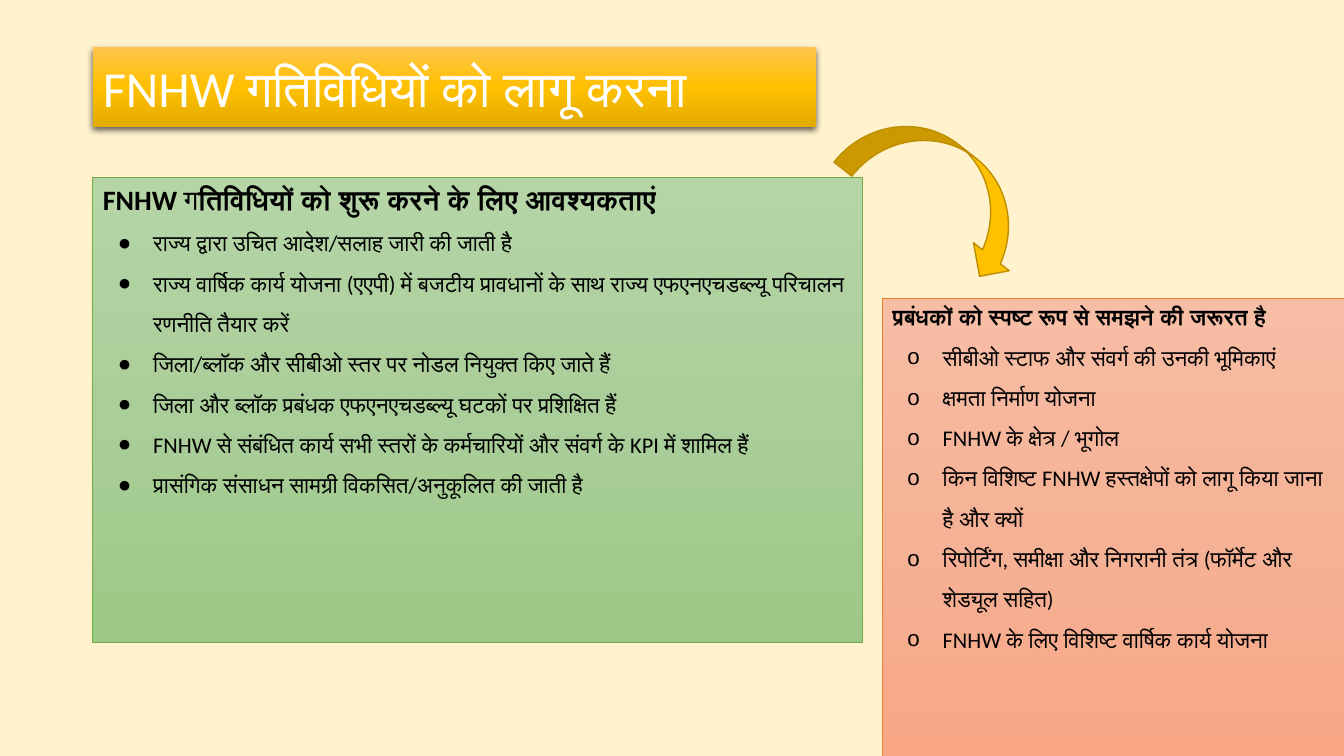
from copy import deepcopy

from lxml.etree import SubElement
from pptx import Presentation
from pptx.dml.color import RGBColor
from pptx.enum.shapes import MSO_SHAPE
from pptx.enum.text import MSO_ANCHOR, MSO_AUTO_SIZE, PP_ALIGN
from pptx.oxml.ns import qn
from pptx.util import Inches, Pt

CREAM = RGBColor(0xFF, 0xF2, 0xCC)
BLACK = RGBColor(0x00, 0x00, 0x00)
WHITE = RGBColor(0xFF, 0xFF, 0xFF)
GOLD = RGBColor(0xFF, 0xC0, 0x00)
DARK_GOLD = RGBColor(0xBD, 0x8E, 0x00)
GREEN = RGBColor(0x70, 0xAD, 0x47)
ORANGE = RGBColor(0xED, 0x7D, 0x31)
GOLD_SHADES = (RGBColor(0xFF, 0xC6, 0x4B), GOLD, RGBColor(0xE3, 0xAB, 0x00))
GREEN_SHADES = (RGBColor(0xB5, 0xD5, 0xA7), RGBColor(0xAA, 0xCE, 0x9A),
                RGBColor(0x9C, 0xC9, 0x87))
ORANGE_SHADES = (RGBColor(0xF7, 0xBD, 0xA5), RGBColor(0xF5, 0xB1, 0x96),
                 RGBColor(0xF8, 0xA5, 0x82))

WIDTH, HEIGHT = Inches(13.33), Inches(7.5)
LEFT_EDGE = 6.9

TITLE = "FNHW गतिविधियों को लागू करना"
NEEDS_HEADING = (("FNHW ", True), ("ग", False),
                 ("तिविधियों को शुरू करने के लिए आवश्यकताएं", True))
NEEDS = (
    "राज्य द्वारा उचित आदेश/सलाह जारी की जाती है",
    "राज्य वार्षिक कार्य योजना (एएपी) में बजटीय प्रावधानों के साथ राज्य "
    "एफएनएचडब्ल्यू परिचालन रणनीति तैयार करें",
    "जिला/ब्लॉक और सीबीओ स्तर पर नोडल नियुक्त किए जाते हैं",
    "जिला और ब्लॉक प्रबंधक एफएनएचडब्ल्यू घटकों पर प्रशिक्षित हैं",
    "FNHW से संबंधित कार्य सभी स्तरों के कर्मचारियों और संवर्ग के KPI में शामिल हैं",
    "प्रासंगिक संसाधन सामग्री विकसित/अनुकूलित की जाती है",
)
MANAGERS_HEADING = (("प्रबंधकों को स्पष्ट रूप से समझने की जरूरत है", True),)
MANAGERS = (
    "सीबीओ स्टाफ और संवर्ग की उनकी भूमिकाएं",
    "क्षमता निर्माण योजना",
    "FNHW के क्षेत्र / भूगोल",
    "किन विशिष्ट FNHW हस्तक्षेपों को लागू किया जाना है और क्यों",
    "रिपोर्टिंग, समीक्षा और निगरानी तंत्र (फॉर्मेट और शेड्यूल सहित)",
    "FNHW के लिए विशिष्ट वार्षिक कार्य योजना",
)


def apply_format(target, **values):
    for name, value in values.items():
        setattr(target, name, value)


def share(left, top, width, height):
    """Turn percentages of the slide's size into a position and size."""
    return {"left": int(WIDTH * left / 100), "top": int(HEIGHT * top / 100),
            "width": int(WIDTH * width / 100), "height": int(HEIGHT * height / 100)}


def shade(fill, colors):
    """Fill from top to bottom with three evenly spaced colours."""
    fill.gradient()
    fill.gradient_angle = 270
    stops = fill.gradient_stops
    stop_list = fill._xPr.find(qn("a:gradFill")).find(qn("a:gsLst"))
    stop_list.insert(1, deepcopy(stop_list[0]))
    stops = fill.gradient_stops
    for index, color in enumerate(colors):
        apply_format(stops[index], position=index / 2)
        stops[index].color.rgb = color


def outline(shape, color, points):
    shape.line.color.rgb = color
    shape.line.width = Pt(points)


def write_run(paragraph, text, size, color, bold=False):
    run = paragraph.add_run()
    run.text = text
    apply_format(run.font, name="Calibri", size=Pt(size), bold=bold)
    run.font.color.rgb = color


def set_bullet(paragraph, char=None):
    """Give the paragraph a hanging bullet, or none at all."""
    props = paragraph._p.get_or_add_pPr()
    props.set("marL", str(Inches(0.5) if char else 0))
    props.set("indent", str(Inches(-0.35) if char else 0))
    if char:
        SubElement(props, qn("a:buChar")).set("char", char)
    else:
        SubElement(props, qn("a:buNone"))


def fill_title(title):
    apply_format(title, **share(LEFT_EDGE, 6.27, 53.79, 10.53))
    shade(title.fill, GOLD_SHADES)
    title.line.fill.background()
    effects = SubElement(title._element.spPr, qn("a:effectLst"))
    shadow = SubElement(effects, qn("a:outerShdw"), blurRad=str(Pt(4.5)),
                        dist=str(Pt(1.5)), dir="5400000", rotWithShape="0")
    shadow_color = SubElement(shadow, qn("a:srgbClr"), val=str(BLACK))
    SubElement(shadow_color, qn("a:alpha"), val="63000")
    apply_format(title.text_frame, vertical_anchor=MSO_ANCHOR.MIDDLE,
                 word_wrap=True, auto_size=MSO_AUTO_SIZE.NONE)
    paragraph = title.text_frame.paragraphs[0]
    paragraph.alignment = PP_ALIGN.LEFT
    write_run(paragraph, TITLE, 36, WHITE)


def fill_panel(panel, area, shades, edge, heading, heading_size, items, bullet):
    apply_format(panel, **share(*area))
    shade(panel.fill, shades)
    outline(panel, edge, 0.5)
    frame = panel.text_frame
    apply_format(frame, vertical_anchor=MSO_ANCHOR.TOP, word_wrap=True,
                 auto_size=MSO_AUTO_SIZE.NONE)
    heading_line = frame.paragraphs[0]
    set_bullet(heading_line)
    heading_line.space_before = Pt(0)
    for text, bold in heading:
        write_run(heading_line, text, heading_size, BLACK, bold)
    for item in items:
        paragraph = frame.add_paragraph()
        set_bullet(paragraph, bullet)
        apply_format(paragraph, line_spacing=1.5, space_before=Pt(0))
        write_run(paragraph, item, 16, BLACK)


def add_turn_arrow(slide):
    arrow = slide.shapes.add_shape(MSO_SHAPE.CURVED_LEFT_ARROW,
                                   **share(66.84, 11.47, 6.75, 27.47))
    arrow.rotation = 308.1
    arrow.shadow.inherit = False
    arrow.fill.solid()
    arrow.fill.fore_color.rgb = GOLD
    outline(arrow, DARK_GOLD, 1)


def main():
    deck = Presentation()
    apply_format(deck, slide_width=WIDTH, slide_height=HEIGHT)
    slide = deck.slides.add_slide(deck.slide_layouts.get_by_name("Two Content"))
    slide.background.fill.solid()
    slide.background.fill.fore_color.rgb = CREAM

    title, needs, managers = list(slide.placeholders)[:3]
    fill_title(title)
    fill_panel(needs, (LEFT_EDGE, 23.47, 57.24, 61.47), GREEN_SHADES, GREEN,
               NEEDS_HEADING, 20, NEEDS, "●")
    fill_panel(managers, (65.64, 39.47, 34.36, 64.13), ORANGE_SHADES, ORANGE,
               MANAGERS_HEADING, 16, MANAGERS, "o")
    add_turn_arrow(slide)
    deck.save("out.pptx")


if __name__ == "__main__":
    main()
